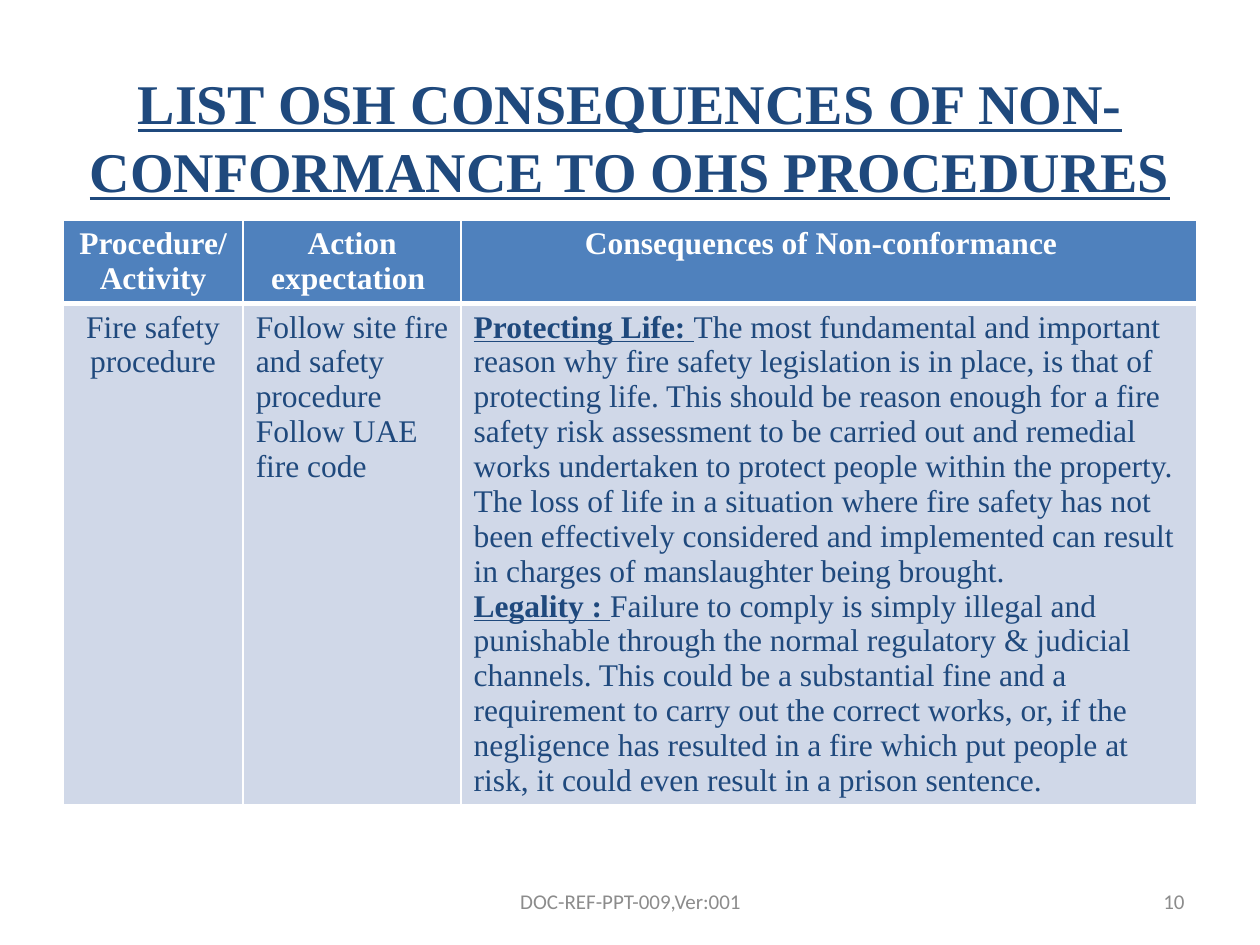
from lxml.etree import SubElement
from pptx import Presentation
from pptx.dml.color import RGBColor
from pptx.enum.text import MSO_ANCHOR, PP_ALIGN
from pptx.oxml.ns import qn
from pptx.util import Inches, Pt

COLORS = {
    "navy": "1F497D",
    "header": "4F81BD",
    "body": "D0D8E8",
    "white": "FFFFFF",
    "gray": "8C8C8C",
}
SERIF = "Times New Roman"
HEADERS = ["Procedure/Activity", "Action expectation ", "Consequences of Non-conformance  "]
PROCEDURE = [[("Fire safety procedure", False)]]
ACTIONS = [
    [("Follow site fire and safety procedure", False)],
    [("Follow UAE fire code", False)],
]
CONSEQUENCES = [
    [
        ("Protecting Life: ", True),
        ("The most fundamental and important reason why fire safety legislation is in place, "
         "is that of protecting life. This should be reason enough for a fire safety risk "
         "assessment to be carried out and remedial works undertaken to protect people within "
         "the property. The loss of life in a situation where fire safety has not been "
         "effectively considered and implemented can result in charges of manslaughter being "
         "brought.", False),
    ],
    [
        ("Legality : ", True),
        ("Failure to comply is simply illegal and punishable through the normal regulatory & "
         "judicial channels. This could be a substantial fine and a requirement to carry out "
         "the correct works, or, if the negligence has resulted in a fire which put people at "
         "risk, it could even result in a prison sentence.", False),
    ],
]


def add_span(para, text, size=18, font=SERIF, color="navy", bold=False, underline=False):
    """Append formatted text to a paragraph."""
    span = para.add_run()
    span.text = text
    span.font.size = Pt(size)
    span.font.name = font
    span.font.bold = bold
    span.font.underline = underline
    span.font.color.rgb = RGBColor.from_string(COLORS[color])


def place(shape, box):
    """Move a shape to a box of left, top, width and height in inches."""
    shape.left, shape.top, shape.width, shape.height = map(Inches, box)


def add_title(page, box):
    """Format the title placeholder."""
    title = page.shapes.title
    place(title, box)
    frame = title.text_frame
    frame.word_wrap = True
    frame.vertical_anchor = MSO_ANCHOR.MIDDLE
    para = frame.paragraphs[0]
    para.alignment = PP_ALIGN.CENTER
    add_span(para, "LIST OSH CONSEQUENCES OF NON-CONFORMANCE TO OHS PROCEDURES",
             size=32, bold=True, underline=True)


def style_cell(cell, fill, bottom_width=1):
    """Give a cell white borders and a solid fill."""
    properties = cell._tc.get_or_add_tcPr()
    for side in ("L", "R", "T", "B"):
        width = bottom_width if side == "B" else 1
        line = SubElement(properties, qn(f"a:ln{side}"), w=str(Pt(width)))
        SubElement(SubElement(line, qn("a:solidFill")), qn("a:srgbClr"), val=COLORS["white"])
    cell.fill.solid()
    cell.fill.fore_color.rgb = RGBColor.from_string(COLORS[fill])


def fill_cell(cell, paragraphs, align=PP_ALIGN.LEFT):
    """Write body paragraphs whose lead-in words are bold and underlined."""
    frame = cell.text_frame
    for index, spans in enumerate(paragraphs):
        para = frame.paragraphs[0] if index == 0 else frame.add_paragraph()
        para.alignment = align
        for text, lead in spans:
            add_span(para, text, bold=lead, underline=lead)


def add_procedure_table(page, box):
    """Build the table of procedures, actions and consequences."""
    table = page.shapes.add_table(2, 3, *map(Inches, box)).table
    for column, width in zip(table.columns, (1.43, 1.73, 5.84)):
        column.width = Inches(width)
    header_height = 0.66
    table.rows[0].height = Inches(header_height)
    table.rows[1].height = Inches(box[3] - header_height)
    for index, text in enumerate(HEADERS):
        cell = table.cell(0, index)
        style_cell(cell, "header", bottom_width=3)
        para = cell.text_frame.paragraphs[0]
        para.alignment = PP_ALIGN.CENTER
        add_span(para, text, color="white", bold=True)
    for index, paragraphs in enumerate((PROCEDURE, ACTIONS, CONSEQUENCES)):
        cell = table.cell(1, index)
        style_cell(cell, "body")
        fill_cell(cell, paragraphs, PP_ALIGN.CENTER if index == 0 else PP_ALIGN.LEFT)


def add_footer(page, box, text, align):
    """Add one small gray footer text."""
    frame = page.shapes.add_textbox(*map(Inches, box)).text_frame
    frame.word_wrap = True
    frame.vertical_anchor = MSO_ANCHOR.MIDDLE
    para = frame.paragraphs[0]
    para.alignment = align
    add_span(para, text, size=12, font="Calibri", color="gray")


def main():
    """Create the deck with its single page."""
    deck = Presentation()
    deck.slide_width, deck.slide_height = Inches(10), Inches(7.5)
    page = deck.slides.add_slide(deck.slide_layouts[5])
    add_title(page, (0.5, 0.3, 9, 1.56))
    add_procedure_table(page, (0.5, 1.75, 9, 4.62))
    add_footer(page, (7.17, 6.95, 2.33, 0.4), "10", PP_ALIGN.RIGHT)
    add_footer(page, (3.42, 6.95, 3.17, 0.4), "DOC-REF-PPT-009,Ver:001", PP_ALIGN.CENTER)
    deck.save("out.pptx")


if __name__ == "__main__":
    main()
